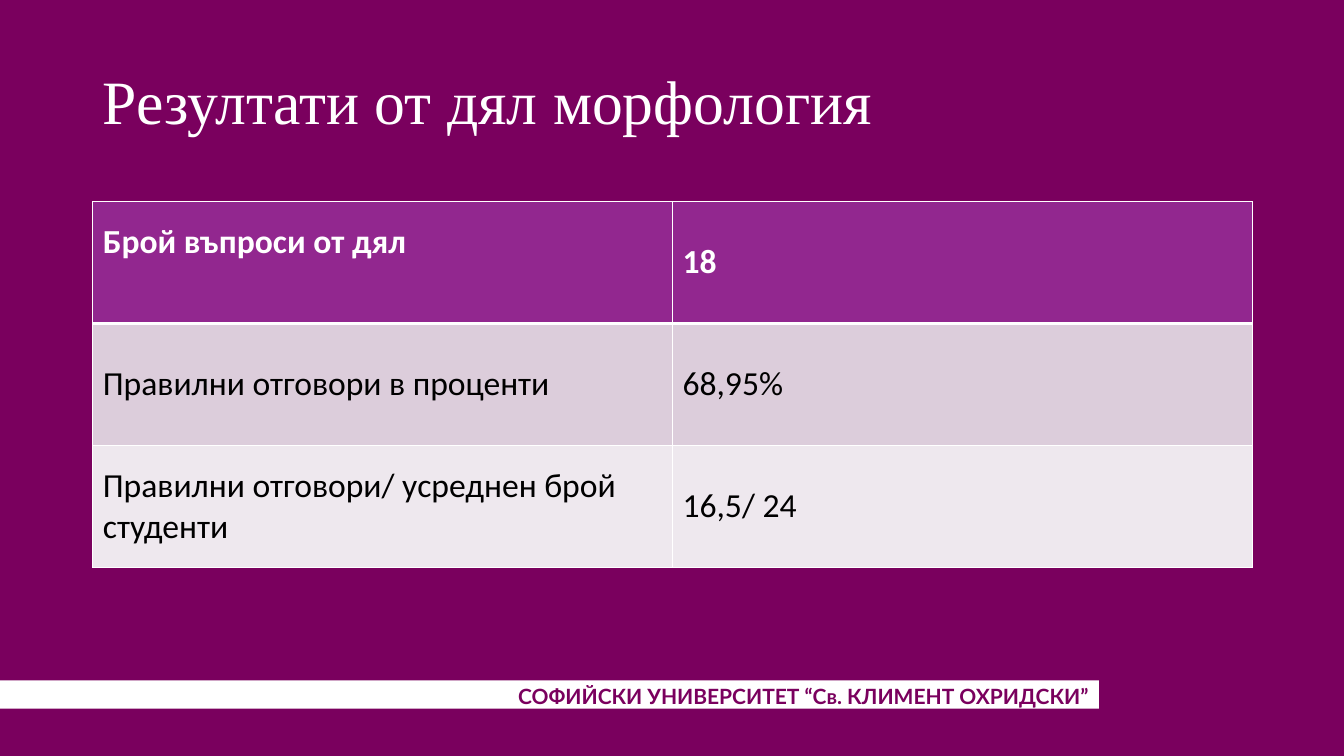
from dataclasses import dataclass

from lxml.etree import SubElement as Sub
from pptx import Presentation
from pptx.dml.color import RGBColor as RGB
from pptx.enum.shapes import MSO_SHAPE as Shape
from pptx.enum.text import MSO_ANCHOR as Anchor, MSO_AUTO_SIZE as Fit, PP_ALIGN as Align
from pptx.oxml.ns import qn
from pptx.util import Inches, Pt


@dataclass(frozen=True)
class Theme:
    plum: str = "7A005E"
    white: str = "FFFFFF"
    black: str = "000000"
    head: str = "92278F"
    bands: tuple = ("DCCDDB", "EEE8EE")
    title_font: str = "Times New Roman"
    table_font: str = "Calibri"
    foot_font: str = "Lato"
    title_size: int = 44
    table_size: int = 24
    foot_size: int = 15


def paint(fill, color):
    fill.solid()
    fill.fore_color.rgb = RGB.from_string(color)


def write(frame, text, *, font, size, color, bold=False, align=Align.LEFT, space=1.0):
    frame.word_wrap = True
    para = frame.paragraphs[0]
    para.alignment = align
    para.line_spacing = space
    run = para.add_run()
    run.text = text
    run.font.name = font
    run.font.size = Pt(size)
    run.font.bold = bold
    run.font.color.rgb = RGB.from_string(color)


def edge(cell, color, base):
    """Draw the four cell borders, with the bottom one `base` points wide."""
    props = cell._tc.get_or_add_tcPr()
    for spot, (side, width) in enumerate((("L", 1), ("R", 1), ("T", 1), ("B", base))):
        line = Sub(props, qn(f"a:ln{side}"), w=str(Pt(width)))
        Sub(Sub(line, qn("a:solidFill")), qn("a:srgbClr"), val=color)
        props.insert(spot, line)


class Deck:
    def __init__(self, theme):
        self.theme = theme
        self.show = Presentation()
        self.show.slide_width = Inches(13.33)
        self.show.slide_height = Inches(7.5)
        self.slide = self.show.slides.add_slide(self.show.slide_layouts[5])
        paint(self.slide.background.fill, theme.plum)

    def title(self, text, left, top, width, height):
        box = self.slide.shapes.title
        box.left, box.top = Inches(left), Inches(top)
        box.width, box.height = Inches(width), Inches(height)
        frame = box.text_frame
        frame.auto_size = Fit.NONE
        frame.vertical_anchor = Anchor.MIDDLE
        write(frame, text, font=self.theme.title_font, size=self.theme.title_size,
              color=self.theme.white, space=0.9)

    def bar(self, left, top, width, height):
        box = self.slide.shapes.add_shape(
            Shape.RECTANGLE, Inches(left), Inches(top), Inches(width), Inches(height))
        box.shadow.inherit = False
        paint(box.fill, self.theme.white)
        box.line.fill.background()

    def footer(self, text, left, top, width, height):
        box = self.slide.shapes.add_textbox(
            Inches(left), Inches(top), Inches(width), Inches(height))
        write(box.text_frame, text, font=self.theme.foot_font, size=self.theme.foot_size,
              color=self.theme.plum, bold=True, align=Align.RIGHT)

    def table(self, rows, left, top, width, height):
        look = self.theme
        grid = self.slide.shapes.add_table(
            len(rows), len(rows[0]), Inches(left), Inches(top),
            Inches(width), Inches(height)).table
        for r, row in enumerate(rows):
            head = r == 0
            for c, text in enumerate(row):
                cell = grid.cell(r, c)
                cell.vertical_anchor = Anchor.MIDDLE
                paint(cell.fill, look.head if head else look.bands[(r - 1) % 2])
                edge(cell, look.white, 3 if head else 1)
                write(cell.text_frame, text, font=look.table_font, size=look.table_size,
                      color=look.white if head else look.black, bold=head)
        # The first heading sits above the middle of its row.
        grid.cell(0, 0).margin_bottom = Inches(0.45)


ROWS = [
    ("Брой въпроси от дял", "18"),
    ("Правилни отговори в проценти", "68,95%"),
    ("Правилни отговори/ усреднен брой студенти", "16,5/ 24"),
]


def main():
    deck = Deck(Theme())
    deck.bar(0, 6.75, 10.9, 0.28)
    deck.footer("СОФИЙСКИ УНИВЕРСИТЕТ “Св. КЛИМЕНТ ОХРИДСКИ”", 3.54, 6.73, 7.36, 0.35)
    deck.title("Резултати от дял морфология", 0.92, 0.31, 11.5, 1.45)
    deck.table(ROWS, 0.92, 2, 11.5, 3.63)
    deck.show.save("out.pptx")


if __name__ == "__main__":
    main()
